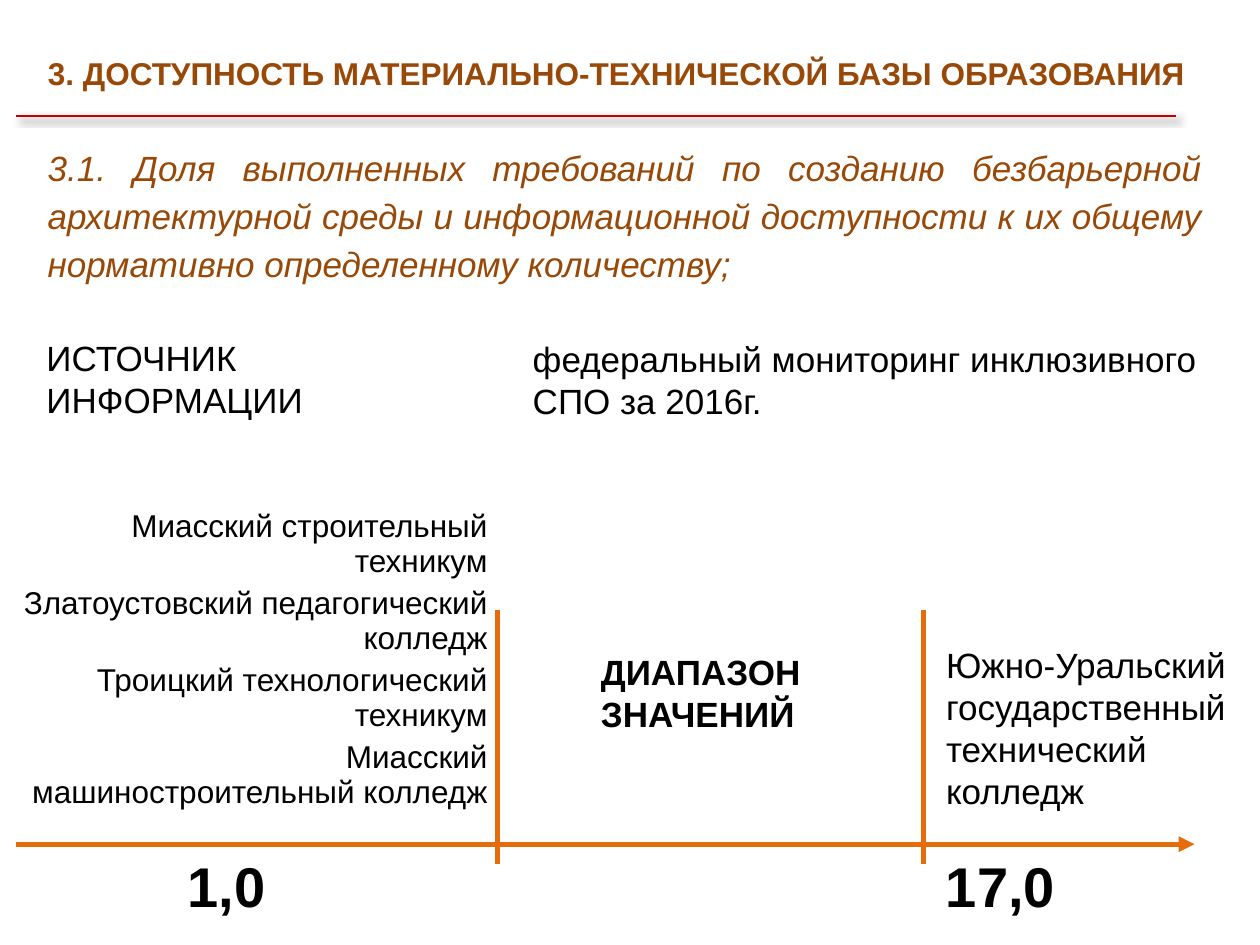
import pptx
import pptx.dml.color
import pptx.enum.dml
import pptx.enum.shapes
import pptx.enum.text
import pptx.oxml
import pptx.oxml.ns
import pptx.util
from dataclasses import dataclass

ALIGN = pptx.enum.text.PP_ALIGN
AUTO_SIZE = pptx.enum.text.MSO_AUTO_SIZE
ANCHOR = pptx.enum.text.MSO_ANCHOR


@dataclass(frozen=True)
class Theme:
    font: str = "Arial"
    heading: str = "984807"
    text: str = "000000"
    rule: str = "C00000"
    axis: str = "E46C0A"
    small: int = 18
    body: int = 20
    value: int = 32


THEME = Theme()
COLUMNS, ROWS = 100, 75  # grid over the 10 x 7.5 inch slide
CELL = pptx.util.Inches(0.1)

COLLEGES = [
    "Миасский строительный техникум",
    "Златоустовский педагогический колледж",
    "Троицкий технологический техникум",
    "Миасский машиностроительный колледж",
]


def grid(*steps):
    """Turn grid steps into lengths."""
    return [pptx.util.Emu(round(step * CELL)) for step in steps]


def rgb(value):
    return pptx.dml.color.RGBColor.from_string(value)


def write(frame, text, size=THEME.body, color=THEME.text, bold=False,
          italic=False, align=ALIGN.LEFT, spacing=None):
    """Put one formatted paragraph into a text frame."""
    paragraph = frame.paragraphs[0]
    paragraph.alignment = align
    if spacing:
        paragraph.line_spacing = spacing
    run = paragraph.add_run()
    run.text = text
    run.font.name = THEME.font
    run.font.size = pptx.util.Pt(size)
    run.font.bold = bold
    run.font.italic = italic
    run.font.color.rgb = rgb(color)


def add_label(slide, text, area, wrap=True, **style):
    frame = slide.shapes.add_textbox(*grid(*area)).text_frame
    frame.word_wrap = wrap
    frame.auto_size = AUTO_SIZE.SHAPE_TO_FIT_TEXT
    write(frame, text, **style)


def add_title(slide, text, area):
    title = slide.shapes.title
    title.left, title.top, title.width, title.height = grid(*area)
    frame = title.text_frame
    frame.word_wrap = True
    frame.auto_size = AUTO_SIZE.NONE
    frame.vertical_anchor = ANCHOR.TOP
    write(frame, text, size=THEME.small, color=THEME.heading, bold=True)


def add_line(slide, start, end, color, width, arrow=False, shadow=False):
    line = slide.shapes.add_connector(
        pptx.enum.shapes.MSO_CONNECTOR.STRAIGHT, *grid(*start, *end))
    line.line.color.rgb = rgb(color)
    line.line.width = pptx.util.Pt(width)
    if arrow:
        head = pptx.oxml.parse_xml(
            f'<a:tailEnd {pptx.oxml.ns.nsdecls("a")} type="triangle"/>')
        line.line._get_or_add_ln().append(head)
    # An empty effect list switches the default shadow off
    outer = ('<a:outerShdw blurRad="50800" dist="38100" dir="2700000" algn="tl">'
             '<a:srgbClr val="000000"><a:alpha val="40000"/></a:srgbClr>'
             '</a:outerShdw>') if shadow else ""
    line._element.spPr.append(pptx.oxml.parse_xml(
        f'<a:effectLst {pptx.oxml.ns.nsdecls("a")}>{outer}</a:effectLst>'))


def add_list_table(slide, entries, area):
    """One-column table without fill or banding."""
    table = slide.shapes.add_table(len(entries), 1, *grid(*area)).table
    table.first_row = table.horz_banding = False
    for cell, entry in zip(table.iter_cells(), entries):
        cell.fill.background()
        cell.margin_left = cell.margin_right = cell.margin_top = pptx.util.Inches(0.01)
        cell.margin_bottom = 0
        write(cell.text_frame, entry, size=THEME.small, align=ALIGN.RIGHT)


def add_range(slide):
    """Axis with its two bounds."""
    low, high, axis = 39.5, 73.3, 67
    for bound in (low, high):
        add_line(slide, (bound, 48.4), (bound, 68.6), THEME.axis, 3)
    add_line(slide, (1.3, axis), (94.8, axis), THEME.axis, 3, arrow=True)
    add_label(slide, "ДИАПАЗОН ЗНАЧЕНИЙ", (46.7, 51.1, 22.1, 7.7), bold=True)
    for value, left, width in (("1,0", 13.9, 8.2), ("17,0", 74.1, 10.7)):
        add_label(slide, value, (left, 67.1, width, 6.4), wrap=False,
                  size=THEME.value, bold=True)
    add_label(slide, "Южно-Уральский государственный технический колледж",
              (74.1, 50.6, 26.8, 14.5))
    add_list_table(slide, COLLEGES, (1.3, 40.3, 37.5, 24.4))


def main():
    deck = pptx.Presentation()
    deck.slide_width, deck.slide_height = grid(COLUMNS, ROWS)
    slide = deck.slides.add_slide(deck.slide_layouts.get_by_name("Title Only"))

    # Heading
    add_line(slide, (1.3, 9.2), (93.3, 9.2), THEME.rule, 1.5, shadow=True)
    add_title(slide, "3. ДОСТУПНОСТЬ МАТЕРИАЛЬНО-ТЕХНИЧЕСКОЙ БАЗЫ ОБРАЗОВАНИЯ",
              (2.8, 3.8, 97.2, 4))
    add_label(slide, "3.1. Доля выполненных требований по созданию безбарьерной "
              "архитектурной среды и информационной доступности к их общему "
              "нормативно определенному количеству;", (2.8, 10.6, 93.6, 12.6),
              color=THEME.heading, italic=True, align=ALIGN.JUSTIFY, spacing=1.15)

    # Source of the data
    add_label(slide, "ИСТОЧНИК ИНФОРМАЦИИ", (2.7, 26.2, 24.9, 7.7))
    add_label(slide, "федеральный мониторинг инклюзивного СПО за 2016г.",
              (41.3, 26.3, 55, 7.7))

    add_range(slide)
    deck.save("out.pptx")


if __name__ == "__main__":
    main()
